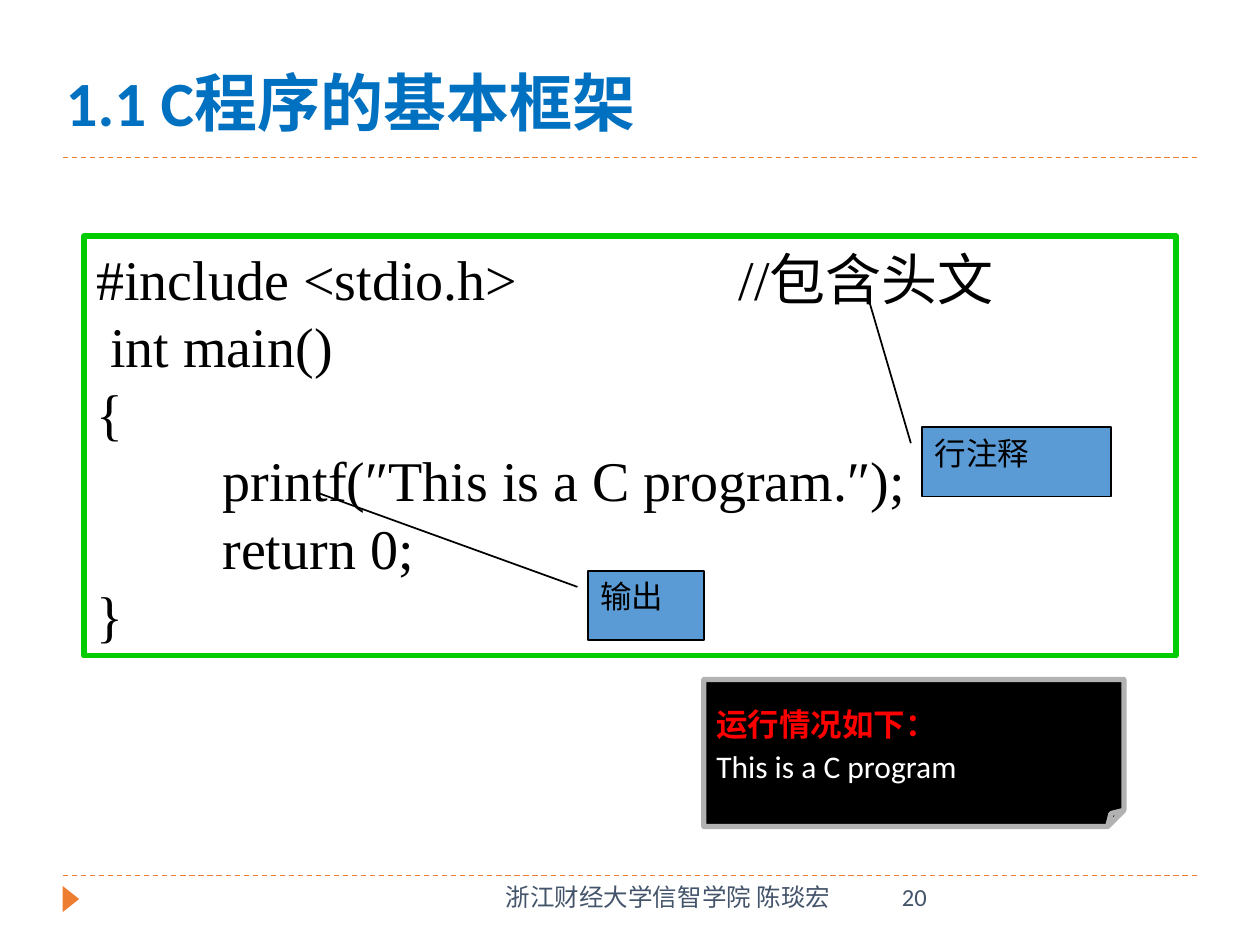
from dataclasses import dataclass

from lxml.etree import SubElement
from pptx import Presentation
from pptx.dml.color import RGBColor
from pptx.enum.dml import MSO_LINE_DASH_STYLE as Dash
from pptx.enum.shapes import MSO_CONNECTOR as Connector, MSO_SHAPE as Preset
from pptx.enum.text import MSO_ANCHOR as Anchor, PP_ALIGN as Align
from pptx.oxml.ns import qn
from pptx.util import Pt

COLORS = {
    "white": "FFFFFF", "black": "000000", "red": "FF0000", "title": "0070C0",
    "orange": "ED7D31", "green": "00CC00", "blue": "5B9BD5", "gray": "B2B2B2",
    "footer": "44546A",
}
CODE_LINES = [
    "#include <stdio.h>\t//包含头文",
    " int main()",
    "{",
    "\tprintf(″This is a C program.″);",
    "\treturn 0;",
    "}",
]
CODE_TAB_STOPS = (72, 367)


@dataclass(frozen=True)
class Box:
    left: float
    top: float
    width: float
    height: float

    def lengths(self) -> tuple:
        return Pt(self.left), Pt(self.top), Pt(self.width), Pt(self.height)


@dataclass(frozen=True)
class Callout:
    text: str
    box: Box
    adjustments: dict


CALLOUTS = [
    Callout("输出", Box(336, 326.3, 66.5, 39.5),
            {"adj1": 0.23, "adj2": -0.09, "adj3": -1.13, "adj4": -2.32}),
    Callout("行注释", Box(527, 244.2, 108, 39.5),
            {"adj1": 0.23, "adj2": -0.06, "adj3": -1.82, "adj4": -0.28}),
]


def color(name: str) -> RGBColor:
    return RGBColor.from_string(COLORS[name])


def add_rule(slide, top: float) -> None:
    connector = slide.shapes.add_connector(
        Connector.STRAIGHT, Pt(36), Pt(top), Pt(684), Pt(top))
    connector.line.color.rgb = color("orange")
    connector.line.width = Pt(0.75)
    connector.line.dash_style = Dash.DASH
    SubElement(connector._element.spPr, qn("a:effectLst"))


def set_adjustments(shape, adjustments: dict) -> None:
    geometry = shape._element.spPr.find(qn("a:prstGeom"))
    for existing in geometry.findall(qn("a:avLst")):
        geometry.remove(existing)
    guides = SubElement(geometry, qn("a:avLst"))
    for name, value in adjustments.items():
        SubElement(guides, qn("a:gd"), name=name, fmla=f"val {round(value * 100000)}")


def add_box(slide, preset, box: Box, fill: str, line=None, line_width=1, adjustments=None):
    shape = slide.shapes.add_shape(preset, *box.lengths())
    shape.shadow.inherit = False
    shape.fill.solid()
    shape.fill.fore_color.rgb = color(fill)
    if line:
        shape.line.color.rgb = color(line)
        shape.line.width = Pt(line_width)
    else:
        shape.line.fill.background()
    if adjustments:
        set_adjustments(shape, adjustments)
    return shape


def write_text(shape, text, *, size, font, ink, bold=False, align=Align.LEFT,
               anchor=Anchor.TOP, line_spacing=None, space_before=0, tab_stops=()):
    """Add each line of text to the shape as a paragraph with the given format."""
    frame = shape.text_frame
    frame.word_wrap = True
    frame.vertical_anchor = anchor
    for line in text.split("\n"):
        paragraph = frame.add_paragraph() if frame.text else frame.paragraphs[0]
        paragraph.alignment = align
        paragraph.space_before = Pt(space_before)
        if line_spacing:
            paragraph.line_spacing = line_spacing
        if tab_stops:
            tab_list = SubElement(paragraph._p.get_or_add_pPr(), qn("a:tabLst"))
            for stop in tab_stops:
                SubElement(tab_list, qn("a:tab"), pos=str(Pt(stop)), algn="l")
        run = paragraph.add_run()
        run.text = line
        run.font.size = Pt(size)
        run.font.name = font
        run.font.bold = bold
        run.font.color.rgb = color(ink)


def add_label(slide, box: Box, text: str, **text_format) -> None:
    write_text(slide.shapes.add_textbox(*box.lengths()), text, font="Calibri", **text_format)


def add_callout(slide, callout: Callout) -> None:
    shape = add_box(slide, Preset.LINE_CALLOUT_1, callout.box, "blue", "black",
                    adjustments=callout.adjustments)
    write_text(shape, callout.text, size=18, font="Arial", ink="black")


def add_output_note(slide) -> None:
    note = add_box(slide, Preset.FOLDED_CORNER, Box(402.2, 388.3, 240, 84), "black",
                   "gray", 3, {"adj": 0.11})
    note.text_frame.margin_top = note.text_frame.margin_bottom = 0
    write_text(note, "运行情况如下：", size=18, font="Arial", ink="red", bold=True,
               anchor=Anchor.MIDDLE, space_before=3.6)
    write_text(note, "This is a C program", size=18, font="Calibri", ink="white",
               anchor=Anchor.MIDDLE, space_before=2.7)


def main() -> None:
    presentation = Presentation()
    presentation.slide_width, presentation.slide_height = Pt(720), Pt(540)
    slide = presentation.slides.add_slide(presentation.slide_layouts[6])

    for top in (500.4, 90):
        add_rule(slide, top)
    marker = add_box(slide, Preset.ISOSCELES_TRIANGLE, Box(33, 509, 15, 9.5), "orange")
    marker.rotation = 90

    add_label(slide, Box(30.5, 13.8, 621, 70), "1.1 C程序的基本框架", size=36, ink="title",
              bold=True, anchor=Anchor.BOTTOM, line_spacing=0.9)

    code = add_box(slide, Preset.RECTANGLE, Box(48, 134.8, 624, 240), "white", "green", 3)
    write_text(code, "\n".join(CODE_LINES), size=32, font="Times New Roman", ink="black",
               anchor=Anchor.MIDDLE, line_spacing=Pt(38.4), tab_stops=CODE_TAB_STOPS)

    for callout in CALLOUTS:
        add_callout(slide, callout)
    add_output_note(slide)

    add_label(slide, Box(238.3, 500.4, 243.4, 28.8), "浙江财经大学信智学院 陈琰宏",
              size=14, ink="footer", align=Align.RIGHT)
    add_label(slide, Box(508.3, 500.4, 162, 28.8), "20", size=14, ink="footer")

    presentation.save("out.pptx")


if __name__ == "__main__":
    main()
